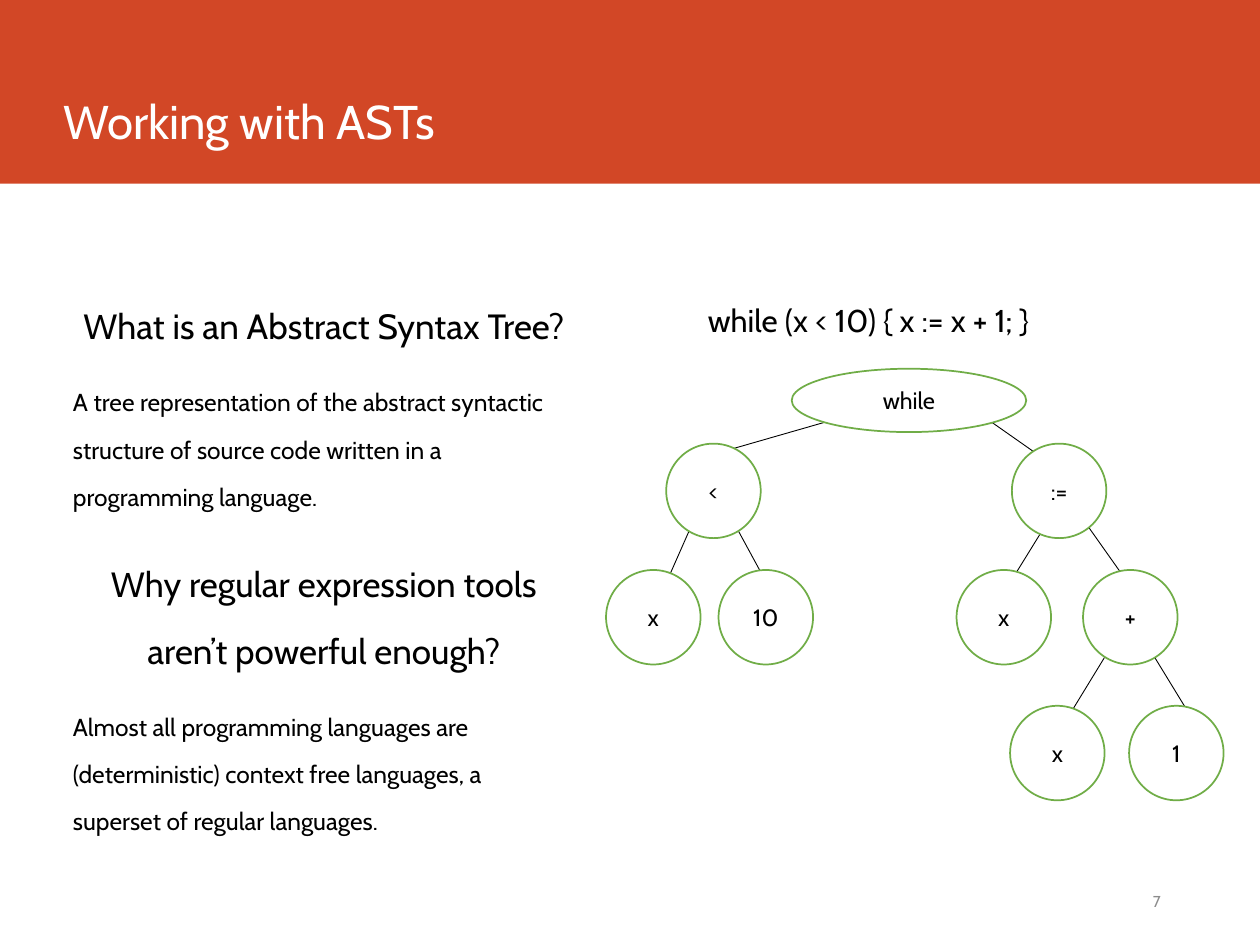
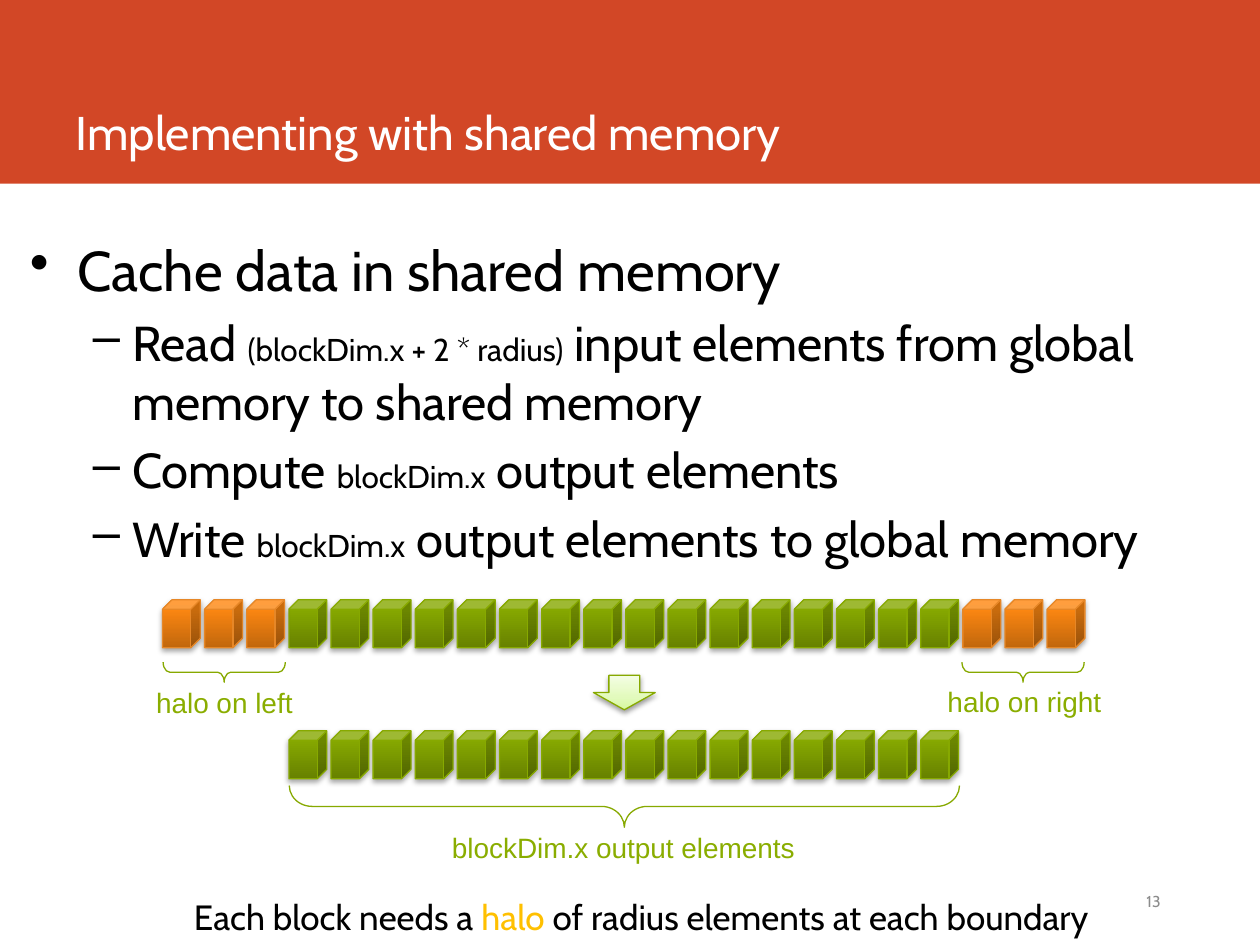
"""Build two slides: an abstract syntax tree and a shared-memory halo diagram."""
from dataclasses import dataclass
from typing import NamedTuple

from lxml.etree import SubElement
from pptx import Presentation
from pptx.dml.color import RGBColor
from pptx.enum.shapes import MSO_CONNECTOR, MSO_SHAPE
from pptx.enum.text import MSO_ANCHOR, MSO_AUTO_SIZE, PP_ALIGN
from pptx.oxml.ns import qn
from pptx.util import Pt


@dataclass(frozen=True)
class Theme:
    """Colours, fonts and type sizes of the deck."""
    font: str = "Cabin"
    label_font: str = "Arial"
    band: str = "D24726"
    white: str = "FFFFFF"
    ink: str = "000000"
    page: str = "8C8C8C"
    node: str = "70AD47"
    label: str = "8AAD00"
    halo: str = "FFC000"
    green_line: str = "87A900"
    title_size: float = 27
    point_size: float = 32
    detail_size: float = 28
    heading_size: float = 20
    code_size: float = 18
    label_size: float = 16
    body_size: float = 14
    node_size: float = 13.5
    page_size: float = 9


THEME = Theme()


class Box(NamedTuple):
    """Left, top, width and height in points."""
    left: float
    top: float
    width: float
    height: float

    def lengths(self) -> list:
        """Return the four values as lengths."""
        return [Pt(value) for value in self]


class Run(NamedTuple):
    """A stretch of text that may differ from its paragraph."""
    text: str
    size: float | None = None
    color: str | None = None


class Bullet(NamedTuple):
    """A bullet sign with its margin and hanging indent."""
    sign: str
    margin: float
    hang: float


class Node(NamedTuple):
    """A labelled node of the syntax tree."""
    label: str
    left: float
    top: float
    width: float = 54
    height: float = 54


class Edge(NamedTuple):
    """A line from a parent node to a child node."""
    x1: float
    y1: float
    x2: float
    y2: float


class Glow(NamedTuple):
    """Gradient stops, outline and shadow strength of a raised shape."""
    stops: tuple
    line: str
    shadow: int
    distance: float


class Brace(NamedTuple):
    """A brace below cubes: unrotated frame and curl."""
    box: Box
    curl: float


GREEN = Glow(((0, "678100"), (80, "86A800"), (100, "86A800")), THEME.green_line, 35, 1.8)
ORANGE = Glow(((0, "C1670D"), (80, "FB8611"), (100, "FF860E")), "E68727", 35, 1.8)
PALE = Glow(((0, "D7F99E"), (35, "E2FABC"), (100, "F4FEE4")), THEME.green_line, 38, 1.6)

POINT = Bullet("•", 27, 27)
DETAIL = Bullet("–", 58.5, 22.5)

NODES = (
    Node("while", 452.4, 210.7, 134, 36.2),
    Node("<", 380.7, 253.5), Node(":=", 578.2, 253.5),
    Node("x", 346.3, 325.7), Node("10", 410.6, 325.7),
    Node("x", 546.6, 325.7), Node("+", 618.9, 325.7),
    Node("x", 577.2, 403.3), Node("1", 645.2, 403.3),
)
EDGES = (
    Edge(471.6, 241.2, 409, 259.2), Edge(566.6, 241.2, 600.5, 265),
    Edge(397.4, 295.2, 380.9, 332.6), Edge(419, 298, 437.8, 332.6),
    Edge(600.5, 295.2, 577.4, 332.6), Edge(617.8, 295.2, 645.8, 334.8),
    Edge(637.2, 365.8, 611.3, 408.2), Edge(659.5, 375.1, 681.1, 410.4),
)

CUBES_LEFT, CUBE_PITCH = 92.9, 24.07
CUBE_WIDTH, CUBE_HEIGHT = 21.6, 27.4
INPUT_TOP, OUTPUT_TOP = 342.7, 417.6
HALO_COUNT, BLOCK_COUNT = 3, 16
BRACES = (
    Brace(Box(344.9, 269.3, 23.8, 383), 0.55),
    Brace(Box(122.4, 349.2, 11.5, 69.8), 0.33),
    Brace(Box(578.9, 349.2, 11.5, 69.8), 0.33),
)
LABELS = (
    ("blockDim.x output elements", Box(249.8, 470.9, 213, 26.6)),
    ("halo on left", Box(81.4, 388.1, 93.6, 26.6)),
    ("halo on right", Box(533.5, 387.4, 103.7, 26.6)),
)


def write(frame, text: str | list[Run], *, size: float, color: str = THEME.ink,
          font: str = THEME.font, align=PP_ALIGN.LEFT, spacing: float = 1,
          before: float = 0, after: float = 0, bullet: Bullet | None = None) -> None:
    """Add one formatted paragraph to a text frame."""
    paragraph = frame.add_paragraph() if frame.text else frame.paragraphs[0]
    paragraph.alignment, paragraph.line_spacing = align, spacing
    paragraph.space_before, paragraph.space_after = Pt(before), Pt(after)
    for part in [Run(text)] if isinstance(text, str) else text:
        run = paragraph.add_run()
        run.text = part.text
        run.font.name, run.font.size = font, Pt(part.size or size)
        run.font.color.rgb = RGBColor.from_string(part.color or color)
    if bullet:
        properties = paragraph._p.get_or_add_pPr()
        properties.set("marL", str(Pt(bullet.margin)))
        properties.set("indent", str(-Pt(bullet.hang)))
        SubElement(properties, qn("a:buChar"), char=bullet.sign)


def add_frame(slide, box: Box, anchor=MSO_ANCHOR.TOP, wrap: bool = True):
    """Add a text box and return its text frame."""
    frame = slide.shapes.add_textbox(*box.lengths()).text_frame
    frame.word_wrap, frame.vertical_anchor = wrap, anchor
    return frame


def add_preset(shapes, preset, box: Box, fill: str | None = None,
               line: str | None = None, width: float = 1):
    """Add a flat preset shape."""
    shape = shapes.add_shape(preset, *box.lengths())
    shape.shadow.inherit = False
    if fill:
        shape.fill.solid()
        shape.fill.fore_color.rgb = RGBColor.from_string(fill)
    else:
        shape.fill.background()
    if line:
        shape.line.color.rgb = RGBColor.from_string(line)
        shape.line.width = Pt(width)
    else:
        shape.line.fill.background()
    return shape


def add_raised(shapes, preset, box: Box, glow: Glow) -> None:
    """Add a preset shape with a vertical gradient and a soft shadow."""
    shape = add_preset(shapes, preset, box, line=glow.line, width=0.75)
    shape.fill.gradient()
    shape.fill.gradient_angle = 90
    properties = shape.element.spPr
    stops = properties.find(".//" + qn("a:gsLst"))
    stops.clear()
    for position, color in glow.stops:
        stop = SubElement(stops, qn("a:gs"), pos=str(position * 1000))
        SubElement(stop, qn("a:srgbClr"), val=color)
    shadow = SubElement(properties.find(qn("a:effectLst")), qn("a:outerShdw"),
                        blurRad=str(Pt(3.1)), dist=str(Pt(glow.distance)),
                        dir="5400000", rotWithShape="0")
    shade = SubElement(shadow, qn("a:srgbClr"), val=THEME.ink)
    SubElement(shade, qn("a:alpha"), val=str(glow.shadow * 1000))


def add_edge(slide, edge: Edge) -> None:
    """Draw one thin tree edge."""
    line = slide.shapes.add_connector(MSO_CONNECTOR.STRAIGHT, *[Pt(v) for v in edge])
    line.line.color.rgb = RGBColor.from_string(THEME.ink)
    line.line.width = Pt(0.5)
    SubElement(line.element.spPr, qn("a:effectLst"))


def add_node(slide, node: Node) -> None:
    """Draw one labelled tree node."""
    oval = add_preset(slide.shapes, MSO_SHAPE.OVAL, Box(*node[1:]), THEME.white, THEME.node)
    oval.text_frame.vertical_anchor = MSO_ANCHOR.MIDDLE
    write(oval.text_frame, node.label, size=THEME.node_size, align=PP_ALIGN.CENTER)


def add_cubes(shapes, first: int, count: int, top: float, glow: Glow) -> None:
    """Draw a run of cubes on the shared column grid."""
    for column in range(first, first + count):
        left = CUBES_LEFT + column * CUBE_PITCH
        add_raised(shapes, MSO_SHAPE.CUBE, Box(left, top, CUBE_WIDTH, CUBE_HEIGHT), glow)


def start_slide(deck, heading: str, box: Box, number: int):
    """Add a slide with the band, title and page number."""
    slide = deck.slides.add_slide(deck.slide_layouts[5])
    title = slide.shapes.title
    band = add_preset(slide.shapes, MSO_SHAPE.RECTANGLE, Box(0, 0, 720, 105), THEME.band)
    title.element.addprevious(band.element)
    title.left, title.top, title.width, title.height = box.lengths()
    title.text_frame.auto_size = MSO_AUTO_SIZE.NONE
    title.text_frame.vertical_anchor = MSO_ANCHOR.BOTTOM
    write(title.text_frame, heading, size=THEME.title_size, color=THEME.white)
    page = add_frame(slide, Box(476.6, 500.4, 193.7, 28.8), MSO_ANCHOR.MIDDLE)
    write(page, str(number), size=THEME.page_size, color=THEME.page, align=PP_ALIGN.RIGHT)
    return slide


def build_syntax_tree(deck) -> None:
    """Build the slide on abstract syntax trees."""
    slide = start_slide(deck, "Working with ASTs", Box(28.8, 17.3, 635, 71.3), 7)
    answers = add_frame(slide, Box(34.6, 156.2, 301, 353.5))
    for question, answer in (
        ("What is an Abstract Syntax Tree?",
         "A tree representation of the abstract syntactic structure of source code "
         "written in a programming language."),
        ("Why regular expression tools aren’t powerful enough?",
         "Almost all programming languages are (deterministic) context free languages, "
         "a superset of regular languages."),
    ):
        write(answers, question, size=THEME.heading_size, align=PP_ALIGN.CENTER,
              spacing=1.6, before=6, after=9)
        write(answers, answer, size=THEME.body_size, spacing=1.6, before=4.2, after=9)
    code = add_frame(slide, Box(397.4, 168.5, 246.2, 28.8))
    write(code, "while (x < 10) { x := x + 1; }", size=THEME.code_size)
    for edge in EDGES:
        add_edge(slide, edge)
    for node in NODES:
        add_node(slide, node)


def build_shared_memory(deck) -> None:
    """Build the slide on caching with a halo."""
    slide = start_slide(deck, "Implementing with shared memory", Box(36, 0, 635, 95), 13)
    steps = add_frame(slide, Box(10, 131, 687, 401.8))
    write(steps, "Cache data in shared memory", size=THEME.point_size, before=6.4, bullet=POINT)
    for verb, amount, rest in (
        ("Read ", "(blockDim.x + 2 * radius)",
         " input elements from global memory to shared memory"),
        ("Compute ", "blockDim.x", " output elements"),
        ("Write ", "blockDim.x", " output elements to global memory"),
    ):
        write(steps, [Run(verb), Run(amount, THEME.code_size), Run(rest)],
              size=THEME.detail_size, before=5.6, bullet=DETAIL)
    for top in (OUTPUT_TOP, INPUT_TOP):
        block = slide.shapes.add_group_shape()
        add_cubes(block.shapes, HALO_COUNT, BLOCK_COUNT, top, GREEN)
    for first in (0, HALO_COUNT + BLOCK_COUNT):
        add_cubes(slide.shapes, first, HALO_COUNT, INPUT_TOP, ORANGE)
    add_raised(slide.shapes, MSO_SHAPE.DOWN_ARROW, Box(339.1, 385.9, 35.3, 19.7), PALE)
    for brace in BRACES:
        outline = add_preset(slide.shapes, MSO_SHAPE.LEFT_BRACE, brace.box,
                             line=THEME.green_line, width=0.75)
        outline.rotation = 270
        outline.adjustments[0] = brace.curl
    for label, box in LABELS:
        write(add_frame(slide, box, wrap=False), label, size=THEME.label_size,
              color=THEME.label, font=THEME.label_font, align=PP_ALIGN.CENTER)
    summary = add_frame(slide, Box(36, 508.3, 661, 31.6))
    write(summary, [Run("Each block needs a "), Run("halo ", color=THEME.halo),
                    Run("of radius elements at each boundary")],
          size=THEME.heading_size, align=PP_ALIGN.CENTER)


def main() -> None:
    """Build and save the deck."""
    deck = Presentation()
    deck.slide_width, deck.slide_height = Pt(720), Pt(540)
    build_syntax_tree(deck)
    build_shared_memory(deck)
    deck.save("out.pptx")


if __name__ == "__main__":
    main()
